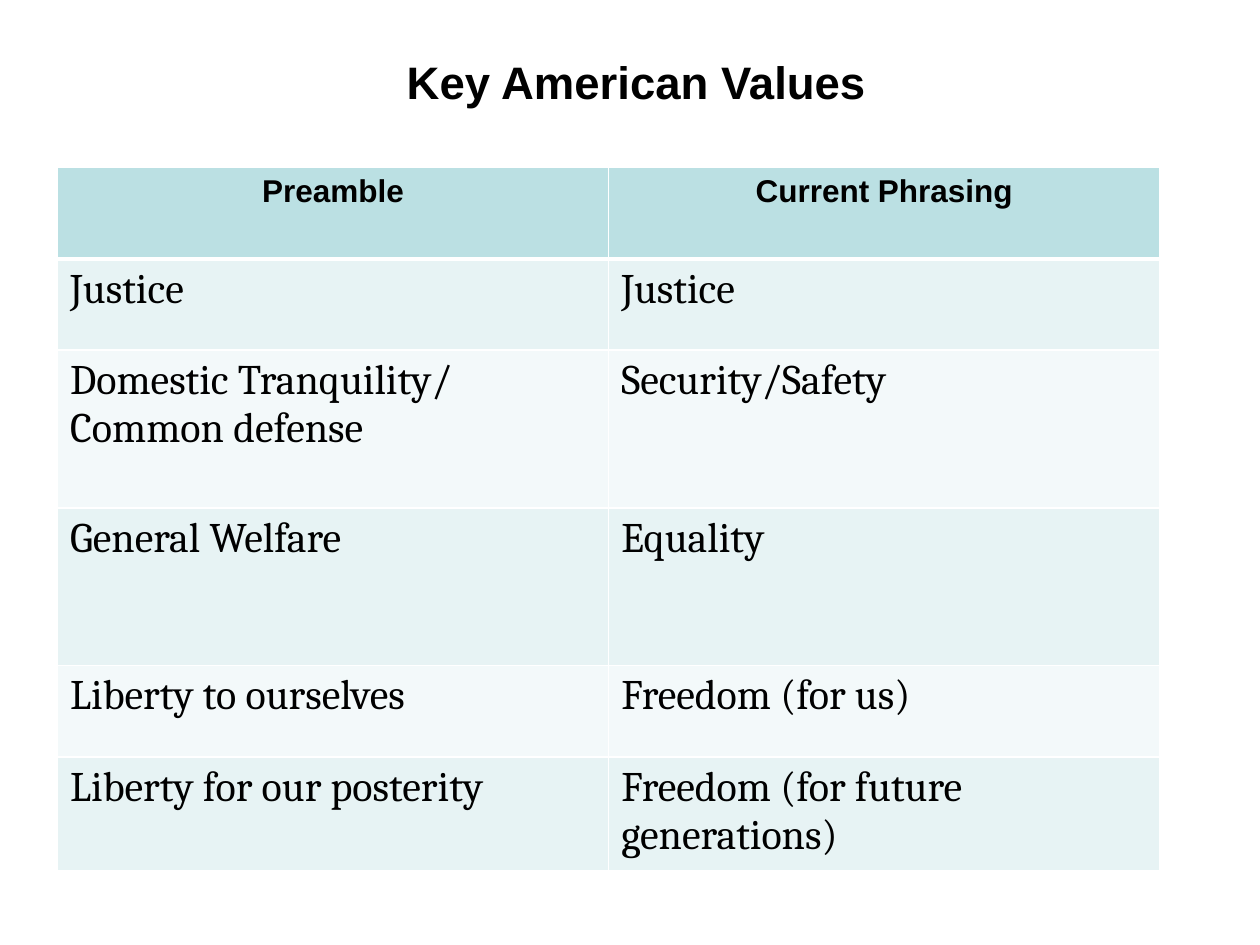
from dataclasses import dataclass

from lxml import etree
from pptx import Presentation
from pptx.dml.color import RGBColor
from pptx.enum.text import MSO_ANCHOR, MSO_AUTO_SIZE, PP_ALIGN
from pptx.oxml.ns import qn
from pptx.util import Cm, Pt

CENTER, LEFT = PP_ALIGN.CENTER, PP_ALIGN.LEFT
TOP = MSO_ANCHOR.TOP
FIT_SHAPE = MSO_AUTO_SIZE.SHAPE_TO_FIT_TEXT


@dataclass(frozen=True)
class Theme:
    text: str = "000000"
    border: str = "FFFFFF"
    header_fill: str = "BBE0E3"
    bands: tuple = ("E7F3F4", "F3F9FA")
    heading_font: str = "Arial"
    body_font: str = "Cambria"
    title_size: int = 26
    header_size: int = 18
    body_size: int = 24


THEME = Theme()

HEADERS = ("Preamble", "Current Phrasing")
# Preamble wording and its current phrasing
VALUES = (
    ("Justice", "Justice"),
    ("Domestic Tranquility/\nCommon defense", "Security/Safety"),
    ("General Welfare", "Equality"),
    ("Liberty to ourselves", "Freedom (for us)"),
    ("Liberty for our posterity", "Freedom (for future generations)"),
)
ROW_HEIGHTS = (1.84, 1.84, 3.18, 3.18, 1.84, 2.29)
COLUMN_WIDTH = 11.11


def write_text(frame, text, font_name, size, bold, align=LEFT):
    frame.text = text
    for paragraph in frame.paragraphs:
        paragraph.alignment = align
        for run in paragraph.runs:
            run.font.name = font_name
            run.font.size = Pt(size)
            run.font.bold = bold
            run.font.color.rgb = RGBColor.from_string(THEME.text)


def set_borders(cell, bottom_width):
    properties = cell._tc.get_or_add_tcPr()
    widths = {"a:lnL": 1, "a:lnR": 1, "a:lnT": 1, "a:lnB": bottom_width}
    for position, (side, width) in enumerate(widths.items()):
        line = etree.Element(qn(side), w=str(Pt(width)))
        fill = etree.SubElement(line, qn("a:solidFill"))
        etree.SubElement(fill, qn("a:srgbClr"), val=THEME.border)
        properties.insert(position, line)


def style_cell(cell, fill, bottom_width=1):
    cell.vertical_anchor = TOP
    cell.fill.solid()
    cell.fill.fore_color.rgb = RGBColor.from_string(fill)
    set_borders(cell, bottom_width)


def add_title(slide):
    title = slide.shapes.add_textbox(Cm(7.95), Cm(0.97), Cm(9.86), Cm(1.37))
    frame = title.text_frame
    frame.word_wrap = False
    frame.auto_size = FIT_SHAPE
    write_text(frame, "Key American Values", THEME.heading_font,
               THEME.title_size, True)


def add_values_table(slide):
    table = slide.shapes.add_table(
        len(ROW_HEIGHTS), len(HEADERS), Cm(1.16), Cm(3.38),
        Cm(COLUMN_WIDTH * len(HEADERS)), Cm(sum(ROW_HEIGHTS))).table
    for column in table.columns:
        column.width = Cm(COLUMN_WIDTH)
    for row, height in zip(table.rows, ROW_HEIGHTS):
        row.height = Cm(height)

    # Header row, with a heavier rule below
    for column, header in enumerate(HEADERS):
        cell = table.cell(0, column)
        write_text(cell.text_frame, header, THEME.heading_font,
                   THEME.header_size, True, CENTER)
        style_cell(cell, THEME.header_fill, bottom_width=3)

    # Banded value rows
    for index, phrases in enumerate(VALUES):
        for column, phrase in enumerate(phrases):
            cell = table.cell(index + 1, column)
            write_text(cell.text_frame, phrase, THEME.body_font,
                       THEME.body_size, False)
            style_cell(cell, THEME.bands[index % 2])


def main():
    presentation = Presentation()
    presentation.slide_width = Cm(25.4)
    presentation.slide_height = Cm(19.05)
    slide = presentation.slides.add_slide(presentation.slide_layouts[6])
    add_values_table(slide)
    add_title(slide)
    presentation.save("out.pptx")


if __name__ == "__main__":
    main()
